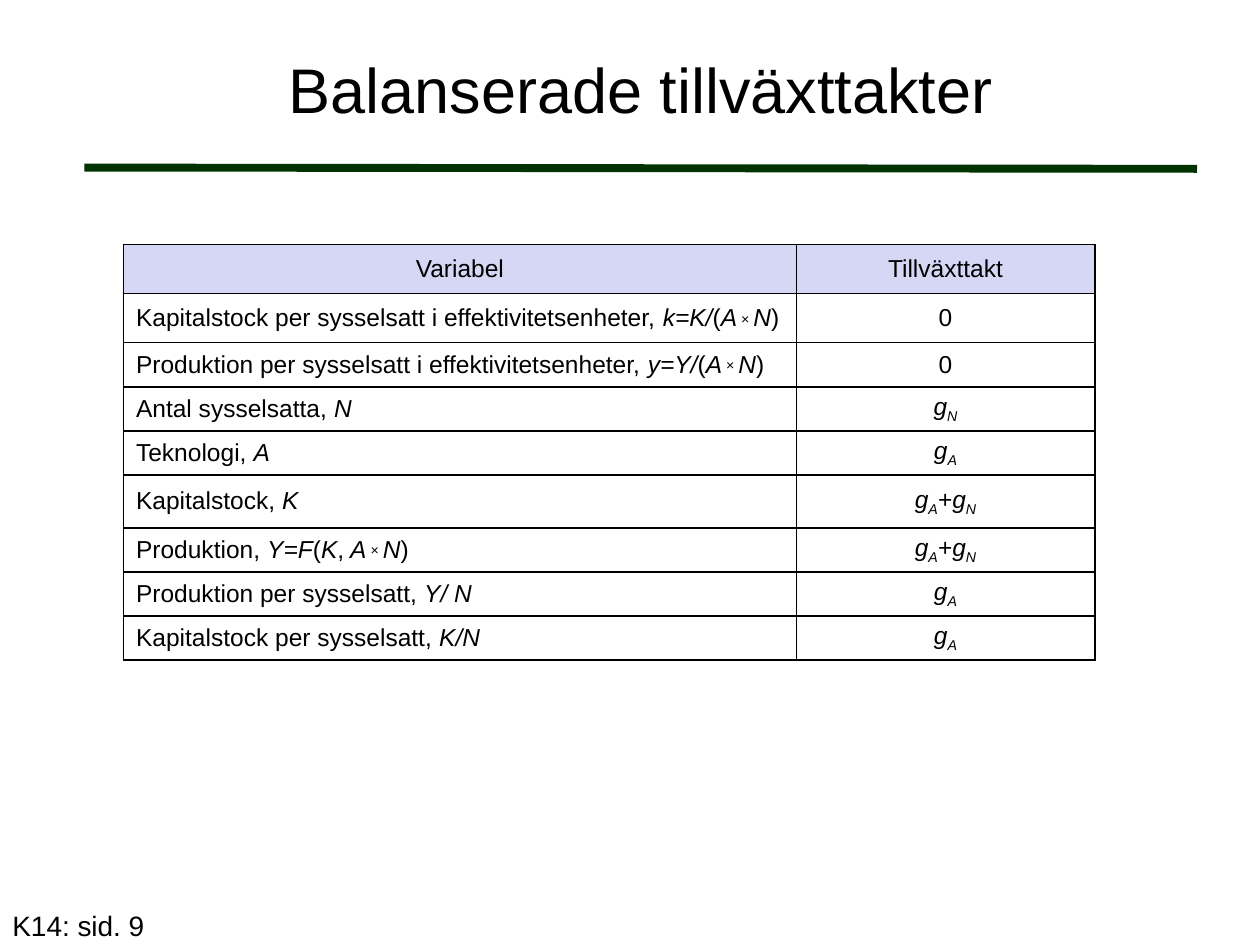
from dataclasses import dataclass
from itertools import groupby

from lxml.etree import SubElement
from pptx import Presentation
from pptx.dml.color import RGBColor
from pptx.enum.shapes import MSO_CONNECTOR
from pptx.enum.text import MSO_ANCHOR, PP_ALIGN
from pptx.oxml.ns import qn
from pptx.util import Inches, Pt

FONT = "Arial"
BLACK, DARK_GREEN, LAVENDER = "000000", "003300", "D6D6F5"
MARGIN_LEFT, CONTENT_WIDTH = 0.67, 8.83
TABLE_LEFT, TABLE_TOP = 0.98, 1.94
COLUMN_WIDTHS = (5.34, 2.37)
ITALIC, SUBSCRIPT, RAISED = "*", "_", "^"
BASELINES = {SUBSCRIPT: "-25000", RAISED: "10000"}


@dataclass(frozen=True)
class GrowthRow:
    """Markers toggle a style: * italic, _ subscript, ^ raised."""
    variable: str
    rate: str
    height: float = 0.35
    header: bool = False


ROWS = (
    GrowthRow("Variabel", "Tillväxttakt", 0.39, header=True),
    GrowthRow("Kapitalstock per sysselsatt i effektivitetsenheter, *k=K/*(*A*^ × ^*N*)", "0", 0.39),
    GrowthRow("Produktion per sysselsatt i effektivitetsenheter, *y=Y/*(*A*^ × ^*N*)", "0"),
    GrowthRow("Antal sysselsatta, *N*", "*g_N_*"),
    GrowthRow("Teknologi, *A*", "*g_A_*"),
    GrowthRow("Kapitalstock, *K*", "*g_A_*+*g_N_*", 0.42),
    GrowthRow("Produktion, *Y=F*(*K*,* A*^ × ^*N*)", "*g_A_*+*g_N_*"),
    GrowthRow("Produktion per sysselsatt, *Y/ N*", "*g_A_*"),
    GrowthRow("Kapitalstock per sysselsatt, *K/N*", "*g_A_*"),
)


def color(hex_string: str) -> RGBColor:
    return RGBColor.from_string(hex_string)


def set_font(paragraph, size: float) -> None:
    paragraph.font.name = FONT
    paragraph.font.size = Pt(size)
    paragraph.font.color.rgb = color(BLACK)


def styled_characters(markup: str):
    """Yield each character with the set of styles active at it."""
    active = frozenset()
    for character in markup:
        if character in (ITALIC, SUBSCRIPT, RAISED):
            active = active ^ {character}
        else:
            yield active, character


def write_formula(paragraph, markup: str) -> None:
    for styles, group in groupby(styled_characters(markup), key=lambda pair: pair[0]):
        run = paragraph.add_run()
        run.text = "".join(character for _, character in group)
        if ITALIC in styles:
            run.font.italic = True
        for marker in styles & BASELINES.keys():
            run.font._element.set("baseline", BASELINES[marker])


def add_borders(cell, hex_string: str, width: float) -> None:
    properties = cell._tc.get_or_add_tcPr()
    for position, side in enumerate(("a:lnL", "a:lnR", "a:lnT", "a:lnB")):
        border = properties.makeelement(qn(side), {"w": str(Pt(width))})
        fill = SubElement(border, qn("a:solidFill"))
        SubElement(fill, qn("a:srgbClr"), val=hex_string)
        properties.insert(position, border)


def fill_cell(cell, markup: str, centered: bool, header: bool) -> None:
    cell.vertical_anchor = MSO_ANCHOR.MIDDLE
    if header:
        cell.fill.solid()
        cell.fill.fore_color.rgb = color(LAVENDER)
    else:
        cell.fill.background()
    paragraph = cell.text_frame.paragraphs[0]
    paragraph.alignment = PP_ALIGN.CENTER if centered else PP_ALIGN.LEFT
    set_font(paragraph, 14)
    write_formula(paragraph, markup)
    for run in paragraph.runs:
        run.font.name = FONT
        run.font.size = Pt(14)
        run.font.color.rgb = color(BLACK)
    if not header:
        paragraph.space_before = paragraph.space_after = Pt(1.4)
    add_borders(cell, BLACK, 1)


def add_growth_table(slide) -> None:
    height = sum(row.height for row in ROWS)
    table = slide.shapes.add_table(
        len(ROWS), len(COLUMN_WIDTHS), Inches(TABLE_LEFT), Inches(TABLE_TOP),
        Inches(sum(COLUMN_WIDTHS)), Inches(height)).table
    table.first_row = table.horz_banding = False
    for column, width in zip(table.columns, COLUMN_WIDTHS):
        column.width = Inches(width)
    for index, row in enumerate(ROWS):
        table.rows[index].height = Inches(row.height)
        fill_cell(table.cell(index, 0), row.variable, row.header, row.header)
        fill_cell(table.cell(index, 1), row.rate, True, row.header)


def add_title(slide, text: str) -> None:
    title = slide.shapes.title
    title.left, title.top = Inches(MARGIN_LEFT), Inches(0.08)
    title.width, title.height = Inches(CONTENT_WIDTH), Inches(1.24)
    title.text_frame.text = text
    title.text_frame.vertical_anchor = MSO_ANCHOR.MIDDLE
    paragraph = title.text_frame.paragraphs[0]
    paragraph.alignment = PP_ALIGN.CENTER
    set_font(paragraph, 36)


def add_title_rule(slide) -> None:
    rule = slide.shapes.add_connector(
        MSO_CONNECTOR.STRAIGHT, Inches(MARGIN_LEFT), Inches(1.33),
        Inches(MARGIN_LEFT + CONTENT_WIDTH), Inches(1.34))
    rule.line.color.rgb = color(DARK_GREEN)
    rule.line.width = Pt(4.5)
    SubElement(rule._element.spPr, qn("a:effectLst"))


def add_page_reference(slide, text: str) -> None:
    reference = slide.shapes.add_textbox(0, Inches(7.16), Inches(2.08), Inches(0.37))
    reference.text_frame.word_wrap = True
    reference.text_frame.text = text
    set_font(reference.text_frame.paragraphs[0], 16)


def main() -> None:
    presentation = Presentation()
    presentation.slide_width, presentation.slide_height = Inches(10), Inches(7.5)
    slide = presentation.slides.add_slide(presentation.slide_layouts.get_by_name("Title Only"))
    add_title_rule(slide)
    add_title(slide, "Balanserade tillväxttakter")
    add_growth_table(slide)
    add_page_reference(slide, "K14: sid. 9")
    presentation.save("out.pptx")


if __name__ == "__main__":
    main()
